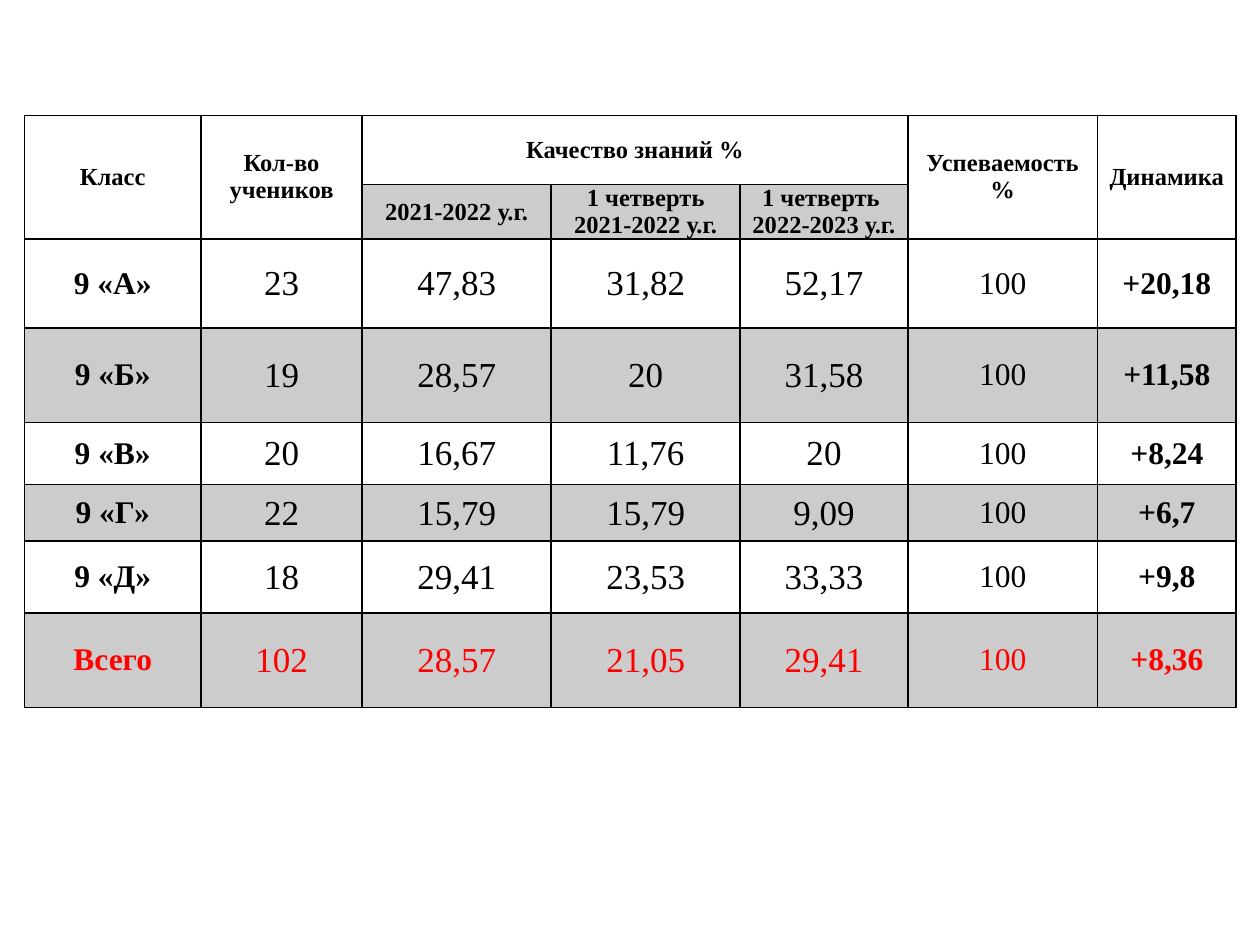
from dataclasses import dataclass

from lxml.etree import SubElement
from pptx import Presentation
from pptx.dml.color import RGBColor as RGB
from pptx.enum.text import MSO_ANCHOR as ANCHOR, PP_ALIGN as ALIGN
from pptx.oxml.ns import qn
from pptx.util import Pt


@dataclass(frozen=True)
class Theme:
    font: str = "Times New Roman"
    ink: RGB = RGB(0, 0, 0)
    total: RGB = RGB(255, 0, 0)
    band_alpha: int = 20
    border: float = 1
    head_size: int = 14
    label_size: int = 18
    value_size: int = 20
    wide_insets: tuple = (5, 0, 5, 0)
    tight_insets: tuple = (0.75, 0.75, 0.75, 0)


class Deck:
    def __init__(self, theme, width, height):
        self.theme = theme
        self.prs = Presentation()
        self.prs.slide_width, self.prs.slide_height = Pt(width), Pt(height)
        self.slide = None

    def add_slide(self):
        self.slide = self.prs.slides.add_slide(self.prs.slide_layouts[6])

    def table(self, left, top, widths, heights):
        frame = self.slide.shapes.add_table(
            len(heights), len(widths), Pt(left), Pt(top),
            Pt(sum(widths)), Pt(sum(heights)))
        tbl = frame.table
        tbl.first_row = tbl.horz_banding = False
        for col, width in zip(tbl.columns, widths):
            col.width = Pt(width)
        for row, height in zip(tbl.rows, heights):
            row.height = Pt(height)
        return tbl

    def borders(self, cell):
        tc_pr = cell._tc.get_or_add_tcPr()
        for side in ("lnL", "lnR", "lnT", "lnB"):
            ln = SubElement(tc_pr, qn(f"a:{side}"), w=str(Pt(self.theme.border)))
            fill = SubElement(ln, qn("a:solidFill"))
            SubElement(fill, qn("a:srgbClr"), val=str(self.theme.ink))

    def shade(self, cell, banded):
        if not banded:
            cell.fill.background()
            return
        cell.fill.solid()
        cell.fill.fore_color.rgb = self.theme.ink
        color = cell._tc.tcPr.find(f"{qn('a:solidFill')}/{qn('a:srgbClr')}")
        SubElement(color, qn("a:alpha"), val=str(self.theme.band_alpha * 1000))

    def cell_text(self, cell, text, size, bold, color, insets):
        (cell.margin_left, cell.margin_top,
         cell.margin_right, cell.margin_bottom) = map(Pt, insets)
        cell.vertical_anchor = ANCHOR.MIDDLE
        p = cell.text_frame.paragraphs[0]
        p.text = text
        p.alignment = ALIGN.CENTER
        for r in p.runs:
            r.font.name = self.theme.font
            r.font.size = Pt(size)
            r.font.bold = bold
            r.font.color.rgb = color


COL_WIDTHS = [100.8, 92.2, 108, 108, 95.8, 108.4, 79.2]
ROW_HEIGHTS = [39.5, 31, 51, 54, 35.3, 32.5, 41, 54]

ROWS = [
    ["Класс", "Кол-во учеников", "Качество знаний %", "", "",
     "Успеваемость %", "Динамика"],
    ["", "", "2021-2022 у.г.", "1 четверть\n2021-2022 у.г.",
     "1 четверть \n2022-2023 у.г.", "", ""],
    ["9 «А»", "23", "47,83", "31,82", "52,17", "100", "+20,18"],
    ["9 «Б»", "19", "28,57", "20", "31,58", "100", "+11,58"],
    ["9 «В»", "20", "16,67", "11,76", "20", "100", "+8,24"],
    ["9 «Г»", "22", "15,79", "15,79", "9,09", "100", "+6,7"],
    ["9 «Д»", "18", "29,41", "23,53", "33,33", "100", "+9,8"],
    ["Всего", "102", "28,57", "21,05", "29,41", "100", "+8,36"],
]
HEAD_ROWS = 2
QUALITY_COLS = range(2, 5)
VALUE_COLS = range(1, 5)
BOLD_COLS = (0, 6)


def main():
    theme = Theme()
    deck = Deck(theme, 720, 540)
    deck.add_slide()
    tbl = deck.table(14, 66, COL_WIDTHS, ROW_HEIGHTS)

    # Merged header cells
    tbl.cell(0, QUALITY_COLS[0]).merge(tbl.cell(0, QUALITY_COLS[-1]))
    for j in range(len(COL_WIDTHS)):
        if j not in QUALITY_COLS:
            tbl.cell(0, j).merge(tbl.cell(1, j))

    # Cells: every second row is banded, the last one is the total
    for i, row in enumerate(ROWS):
        head = i < HEAD_ROWS
        color = theme.total if i == len(ROWS) - 1 else theme.ink
        for j, text in enumerate(row):
            cell = tbl.cell(i, j)
            deck.borders(cell)
            deck.shade(cell, i % 2 == 1 and not cell.is_spanned)
            if cell.is_spanned:
                continue
            value = not head and j in VALUE_COLS
            size = (theme.head_size if head else
                    theme.value_size if value else theme.label_size)
            insets = theme.tight_insets if value else theme.wide_insets
            deck.cell_text(cell, text, size, head or j in BOLD_COLS, color, insets)

    deck.prs.save("out.pptx")


if __name__ == "__main__":
    main()
